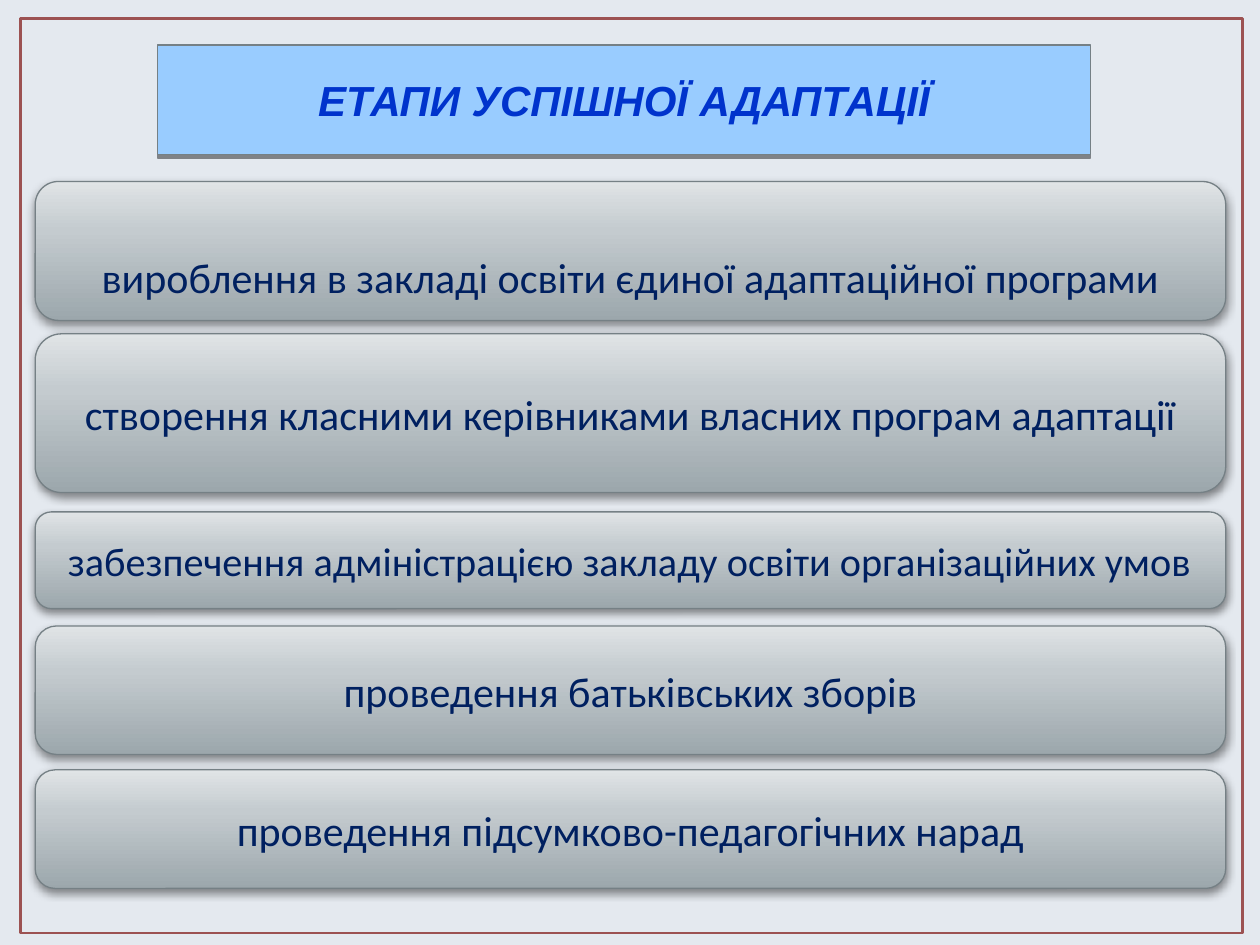
import copy

import pptx
import pptx.dml.color
import pptx.enum.shapes
import pptx.enum.text
import pptx.oxml
import pptx.oxml.ns
import pptx.util
from pptx.util import Cm

COLORS = {
    "background": "E4E9EF",
    "frame": "9C5252",
    "outline": "758085",
    "title_fill": "99CCFF",
    "title_text": "0033CC",
    "stage_text": "002060",
    "stage_dark": "9CA7AC",
    "stage_middle": "C4CBCF",
    "stage_light": "E0E4E6",
}
STAGE_GRADIENT = [(0, "stage_dark"), (0.65, "stage_middle"), (1, "stage_light")]
SHADOW = (
    '<a:effectLst xmlns:a="http://schemas.openxmlformats.org/drawingml/2006/main">'
    '<a:outerShdw blurRad="{blur}" dist="25400" dir="5400000" rotWithShape="0">'
    '<a:srgbClr val="000000"><a:alpha val="43000"/></a:srgbClr>'
    "</a:outerShdw></a:effectLst>"
)
STAGE_LEFT, STAGE_WIDTH = 0.71, 24
# Stage text, top and height in cm, text size in points, top inset in cm
STAGES = [
    ("вироблення в закладі освіти єдиної адаптаційної програми", 3.66, 2.8, 24, 1.16),
    ("створення класними керівниками власних програм адаптації", 6.73, 3.2, 24, 0.13),
    ("забезпечення адміністрацією закладу освіти організаційних умов", 10.32, 1.95, 23, 0.13),
    ("проведення батьківських зборів", 12.62, 2.59, 24, 0.13),
    ("проведення підсумково-педагогічних нарад", 15.52, 2.39, 24, 0.13),
]


def rgb(name):
    return pptx.dml.color.RGBColor.from_string(COLORS[name])


class SlideBuilder:
    def __init__(self, presentation):
        self.slide = presentation.slides.add_slide(presentation.slide_layouts[5])
        fill = self.slide.background.fill
        fill.solid()
        fill.fore_color.rgb = rgb("background")

    def outline(self, shape, color, width):
        shape.line.color.rgb = rgb(color)
        shape.line.width = pptx.util.Pt(width)

    def add_shadow(self, shape, blur):
        xml = SHADOW.format(blur=int(pptx.util.Pt(blur)))
        shape._element.spPr.append(pptx.oxml.parse_xml(xml))

    def set_text(self, shape, text, size, font_name, color, emphasis=False):
        frame = shape.text_frame
        frame.word_wrap = True
        frame.auto_size = pptx.enum.text.MSO_AUTO_SIZE.NONE
        frame.vertical_anchor = pptx.enum.text.MSO_ANCHOR.MIDDLE
        frame.text = text
        paragraph = frame.paragraphs[0]
        paragraph.alignment = pptx.enum.text.PP_ALIGN.CENTER
        font = paragraph.font
        font.name, font.size = font_name, pptx.util.Pt(size)
        font.bold = font.italic = emphasis
        font.color.rgb = rgb(color)

    def add_frame(self, left, top, width, height):
        shape = self.slide.shapes.add_shape(
            pptx.enum.shapes.MSO_SHAPE.RECTANGLE, Cm(left), Cm(top), Cm(width), Cm(height))
        shape.shadow.inherit = False
        shape.fill.background()
        self.outline(shape, "frame", 1.5)

    def set_title(self, text, left, top, width, height):
        title = self.slide.shapes.title
        title.left, title.top = Cm(left), Cm(top)
        title.width, title.height = Cm(width), Cm(height)
        # Give the placeholder a rounded outline
        geometry = title._element.spPr.makeelement(
            pptx.oxml.ns.qn("a:prstGeom"), {"prst": "roundRect"})
        title._element.spPr.append(geometry)
        title.fill.solid()
        title.fill.fore_color.rgb = rgb("title_fill")
        self.outline(title, "outline", 0.75)
        self.add_shadow(title, 0)
        self.set_text(title, text, 24, "Arial", "title_text", emphasis=True)

    def add_stage(self, text, top, height, size, inset):
        shape = self.slide.shapes.add_shape(
            pptx.enum.shapes.MSO_SHAPE.ROUNDED_RECTANGLE,
            Cm(STAGE_LEFT), Cm(top), Cm(STAGE_WIDTH), Cm(height))
        # A new gradient has two stops: add the third
        shape.fill.gradient()
        stop_list = shape._element.spPr.find(".//" + pptx.oxml.ns.qn("a:gsLst"))
        stop_list.append(copy.deepcopy(stop_list[0]))
        for stop, (position, color) in zip(shape.fill.gradient_stops, STAGE_GRADIENT):
            stop.position = position
            stop.color.rgb = rgb(color)
        shape.fill.gradient_angle = 90
        self.outline(shape, "outline", 0.75)
        self.add_shadow(shape, 5)
        self.set_text(shape, text, size, "Calibri", "stage_text")
        shape.text_frame.margin_top = Cm(inset)


def main():
    presentation = pptx.Presentation()
    presentation.slide_width, presentation.slide_height = Cm(25.4), Cm(19.05)
    builder = SlideBuilder(presentation)

    # Border and title
    builder.add_frame(0.41, 0.38, 24.64, 18.43)
    builder.set_title("ЕТАПИ УСПІШНОЇ АДАПТАЦІЇ", 3.18, 0.91, 18.8, 2.21)

    # Stages from top to bottom
    for stage in STAGES:
        builder.add_stage(*stage)

    presentation.save("out.pptx")


if __name__ == "__main__":
    main()
